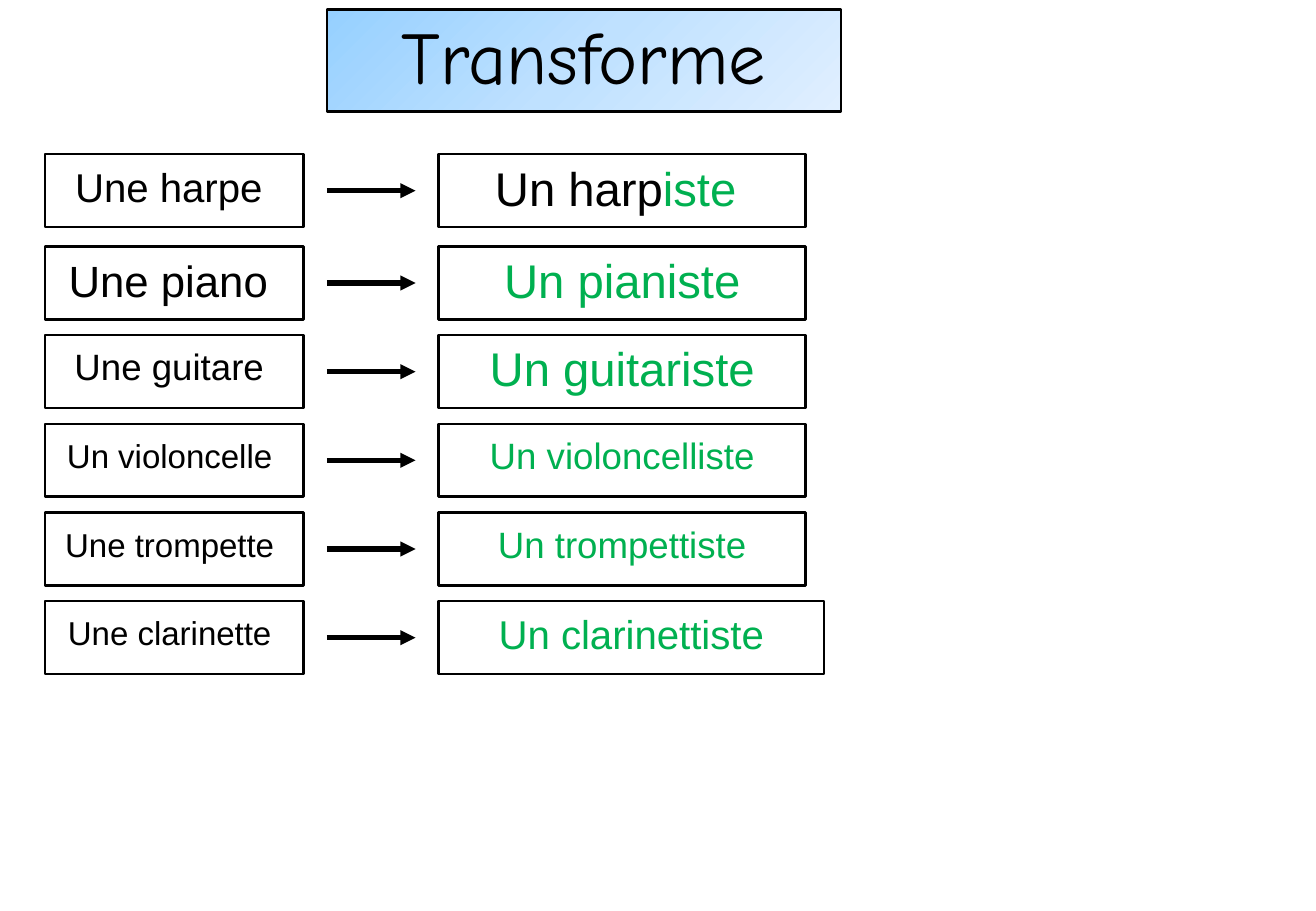
from copy import deepcopy

from pptx import Presentation
from pptx.dml.color import RGBColor
from pptx.enum.shapes import MSO_CONNECTOR, MSO_SHAPE
from pptx.enum.text import MSO_ANCHOR, PP_ALIGN
from pptx.oxml.ns import qn
from pptx.util import Emu, Pt
from lxml.etree import SubElement

# Content: (text, size, line spacing) per word; answer runs are (text, colour)
TITLE = "Transforme"
ROWS = [
    ("Une harpe ", 23.8, 0.8, [("Un harp", "black"), ("iste ", "green")], 28, 0.9),
    ("Une piano ", 25.9, 0.9, [("Un pianiste", "green")], 28, 0.9),
    ("Une guitare ", 21.7, 0.7, [("Un guitariste", "green")], 28, 0.9),
    ("Un violoncelle ", 19.6, 0.7, [("Un violoncelliste", "green")], 21.7, 0.7),
    ("Une trompette ", 19.6, 0.7, [("Un trompettiste", "green")], 21.7, 0.7),
    ("Une clarinette ", 19.6, 0.7, [("Un clarinettiste", "green")], 23.8, 0.8),
]
COLORS = {"black": "000000", "green": "00B050"}
GRADIENT = [(0, "96D0FF"), (0.5, "BFE1FF"), (1, "E0EFFF")]

# Layout in px, 100 to the inch
PX = 9144
WORD_X, WORD_W = 37, 213
ARROW_X1, ARROW_X2 = 269, 342
ANSWER_X, ANSWER_W, LAST_ANSWER_W = 361, 302, 317
BOX_H = 60
FIRST_Y, SECOND_Y, STEP = 127, 203, 73


def px(*values):
    return [Emu(v * PX) for v in values]


def rgb(name):
    return RGBColor.from_string(COLORS[name])


def add_box(box, runs, *, size, spacing, font="Arial", before=10):
    """Outlined box with one centred paragraph of (text, colour) runs."""
    sp = slide.shapes.add_shape(MSO_SHAPE.RECTANGLE, *px(*box))
    sp.shadow.inherit = False
    sp.fill.background()
    sp.line.color.rgb = rgb("black")
    sp.line.width = Pt(1.5)
    tf = sp.text_frame
    tf.word_wrap = True
    tf.vertical_anchor = MSO_ANCHOR.MIDDLE
    p = tf.paragraphs[0]
    p.alignment = PP_ALIGN.CENTER
    p.line_spacing = spacing
    p.space_before = Pt(before)
    for text, color in runs:
        r = p.add_run()
        r.text = text
        r.font.name = font
        r.font.size = Pt(size)
        r.font.color.rgb = rgb(color)
    return sp


def add_arrow(y):
    line = slide.shapes.add_connector(
        MSO_CONNECTOR.STRAIGHT, *px(ARROW_X1, y, ARROW_X2, y))
    line.line.color.rgb = rgb("black")
    line.line.width = Pt(3)
    spPr = line._element.spPr
    SubElement(spPr.find(qn("a:ln")), qn("a:tailEnd"), type="triangle")
    SubElement(spPr, qn("a:effectLst"))


prs = Presentation()
prs.slide_width, prs.slide_height = px(1083, 750)
slide = prs.slides.add_slide(prs.slide_layouts[6])

# Title with a three-stop gradient
title = add_box((269, 8, 423, 84), [(TITLE, "black")],
                size=44, spacing=0.9, font="Comic Neue", before=0)
title.fill.gradient()
title.fill.gradient_angle = 315
stops = title._element.spPr.find(".//" + qn("a:gsLst"))
stops.append(deepcopy(stops[0]))
for stop, (position, color) in zip(title.fill.gradient_stops, GRADIENT):
    stop.position = position
    stop.color.rgb = RGBColor.from_string(color)

# Word, arrow and answer on each row
for i, (word, word_size, word_ls, answer, answer_size, answer_ls) in enumerate(ROWS):
    y = SECOND_Y + (i - 1) * STEP if i else FIRST_Y
    answer_w = LAST_ANSWER_W if i == len(ROWS) - 1 else ANSWER_W
    add_box((WORD_X, y, WORD_W, BOX_H), [(word, "black")],
            size=word_size, spacing=word_ls)
    add_arrow(y + BOX_H // 2)
    add_box((ANSWER_X, y, answer_w, BOX_H), answer,
            size=answer_size, spacing=answer_ls)

prs.save("out.pptx")
